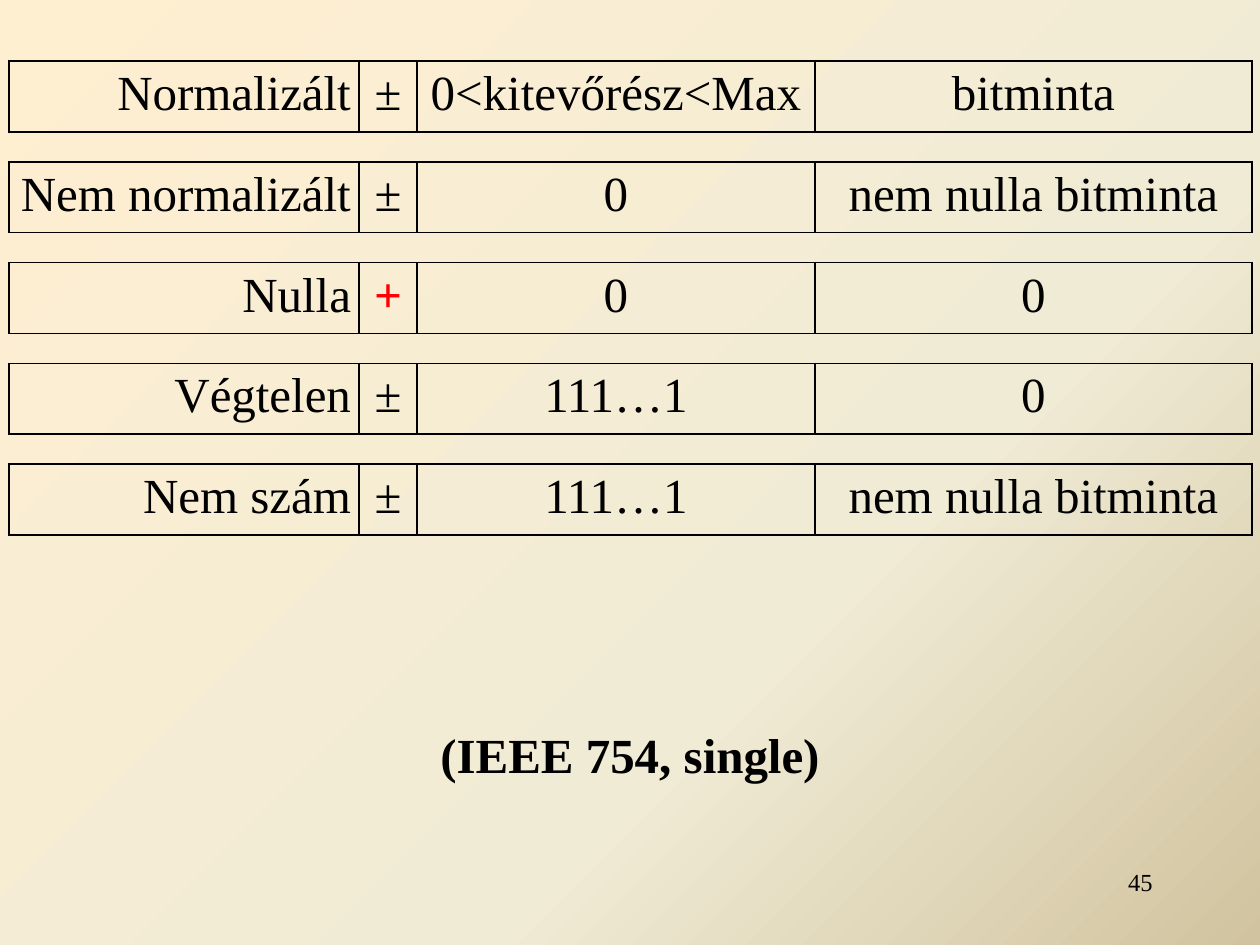
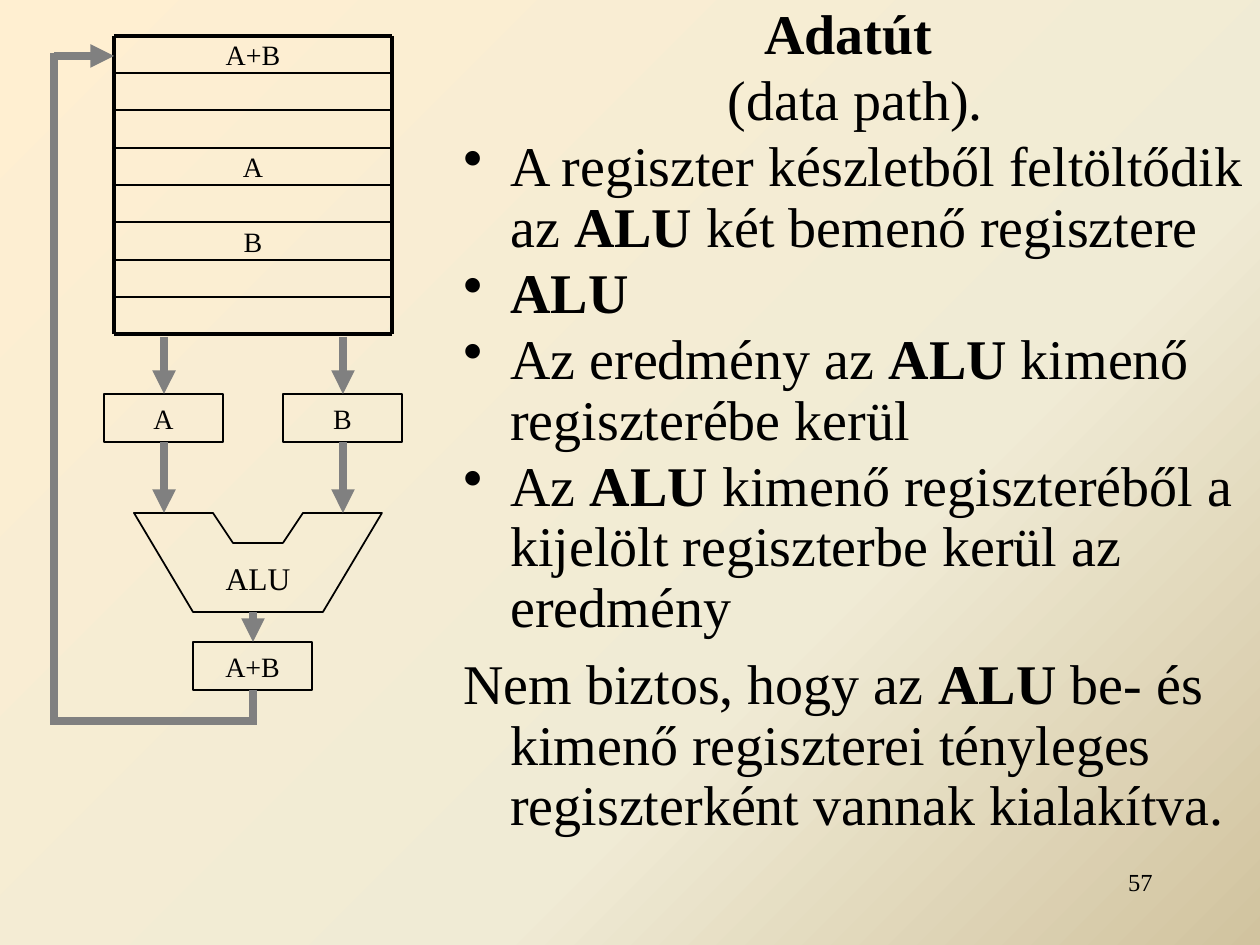
from pptx import Presentation
from pptx.dml.color import RGBColor
from pptx.enum.shapes import MSO_CONNECTOR, MSO_SHAPE
from pptx.enum.text import MSO_ANCHOR, PP_ALIGN
from pptx.oxml import parse_xml
from pptx.oxml.ns import nsdecls, qn
from pptx.oxml.xmlchemy import OxmlElement as new_el
from pptx.util import Emu, Pt

BLACK = RGBColor(0x00, 0x00, 0x00)
RED = RGBColor(0xFF, 0x00, 0x00)
GREY = RGBColor(0x80, 0x80, 0x80)
BACKDROP = [(0, RGBColor(0xFF, 0xEF, 0xD1)),
            (65, RGBColor(0xF0, 0xEB, 0xD5)),
            (100, RGBColor(0xD1, 0xC3, 0x9F))]
FONT = "Times New Roman"
LEFT, CENTER, RIGHT = PP_ALIGN.LEFT, PP_ALIGN.CENTER, PP_ALIGN.RIGHT
TOP, MIDDLE = MSO_ANCHOR.TOP, MSO_ANCHOR.MIDDLE
SLIDE_W, SLIDE_H = 1260, 945
PAGE_BOX = (903, 861, 262, 63)
HANG = 47


def px(n):
    return Emu(round(n * 914400 / 126))


# Shared helpers

def set_backdrop(master):
    fill = master.background.fill
    fill.gradient()
    fill.gradient_angle = 315
    stops = "".join(f'<a:gs pos="{pos * 1000}"><a:srgbClr val="{color}"/></a:gs>'
                    for pos, color in BACKDROP)
    old = next(master._element.iter(qn("a:gsLst")))
    old.getparent().replace(old, parse_xml(f'<a:gsLst {nsdecls("a")}>{stops}</a:gsLst>'))


def add_run(p, text, size, bold=False, color=BLACK):
    r = p.add_run()
    r.text = text
    r.font.color.rgb = color
    for name, value in {"name": FONT, "size": Pt(size), "bold": bold}.items():
        setattr(r.font, name, value)


def set_frame(tf, anchor=TOP, inset=None):
    tf.word_wrap = True
    tf.vertical_anchor = anchor
    if inset is not None:
        for side in ("left", "top", "right", "bottom"):
            setattr(tf, f"margin_{side}", px(inset))


def add_label(shapes, box, text, size, align=CENTER, anchor=TOP, inset=None, bold=False):
    sp = shapes.add_textbox(*map(px, box))
    set_frame(sp.text_frame, anchor, inset)
    p = sp.text_frame.paragraphs[0]
    p.alignment = align
    add_run(p, text, size, bold)
    return p


def outline(sp):
    sp.shadow.inherit = False
    sp.fill.background()
    sp.line.color.rgb = BLACK
    sp.line.width = Pt(1)


def add_line(shapes, start, end, width, color=BLACK, arrow=False):
    line = shapes.add_connector(MSO_CONNECTOR.STRAIGHT, *map(px, (*start, *end)))
    line.line.color.rgb = color
    line.line.width = Pt(width)
    if arrow:
        tail = new_el("a:tailEnd")
        tail.set("type", "triangle")
        line.line._get_or_add_ln().append(tail)
    line._element.spPr.append(new_el("a:effectLst"))


def add_page(prs, number):
    s = prs.slides.add_slide(prs.slide_layouts[6])
    add_label(s.shapes, PAGE_BOX, number, 14, RIGHT)
    return s


# Slide of number formats

FORMATS = [("Normalizált", "±", "0<kitevőrész<Max", "bitminta"),
           ("Nem normalizált", "±", "0", "nem nulla bitminta"),
           ("Nulla", "+", "0", "0"),
           ("Végtelen", "±", "111…1", "0"),
           ("Nem szám", "±", "111…1", "nem nulla bitminta")]
FORMAT_COLS = (350, 58, 398, 437)
FORMAT_ROW, FORMAT_GAP = 69, 30


def set_borders(cell, sides):
    tc_pr = cell._tc.get_or_add_tcPr()
    for side in "LRTB":
        fill = (f'<a:solidFill><a:srgbClr val="{BLACK}"/></a:solidFill>'
                if side in sides else "<a:noFill/>")
        tc_pr.append(parse_xml(
            f'<a:ln{side} {nsdecls("a")} w="{Pt(1)}">{fill}</a:ln{side}>'))
    cell.fill.background()


def fill_format_cell(cell, text, align):
    for name, n in {"left": 8, "right": 8, "top": 6, "bottom": 6}.items():
        setattr(cell, f"margin_{name}", px(n))
    set_borders(cell, "LRTB")
    p = cell.text_frame.paragraphs[0]
    p.alignment = align
    signed = text == "+"
    add_run(p, text, 28, signed, RED if signed else BLACK)


def fill_gap_cell(cell):
    cell.margin_top = cell.margin_bottom = 0
    set_borders(cell, "TB")
    cell.text_frame.paragraphs[0]._p.get_or_add_endParaRPr().set("sz", "600")


def add_format_table(s, x, y):
    rows = 2 * len(FORMATS) - 1
    height = FORMAT_ROW * len(FORMATS) + FORMAT_GAP * (len(FORMATS) - 1)
    table = s.shapes.add_table(rows, len(FORMAT_COLS), px(x), px(y),
                               px(sum(FORMAT_COLS)), px(height)).table
    table.first_row = table.horz_banding = False
    for col, width in zip(table.columns, FORMAT_COLS):
        col.width = px(width)
    for i, row in enumerate(table.rows):
        is_gap = i % 2
        row.height = px(FORMAT_GAP if is_gap else FORMAT_ROW)
        for j, cell in enumerate(row.cells):
            if is_gap:
                fill_gap_cell(cell)
            else:
                fill_format_cell(cell, FORMATS[i // 2][j], CENTER if j else RIGHT)


def build_formats(prs):
    s = add_page(prs, "45")
    p = add_label(s.shapes, (0, 718, SLIDE_W, 97), "(IEEE 754, single)", 28, bold=True)
    p.space_before = Pt(4.2)
    add_format_table(s, 9, 61)


# Slide of the data path: the odd pieces of each text are bold

DATA_PATH_TEXT = [
    (CENTER, False, 3.2, ["", "Adatút "]),
    (CENTER, False, 3.2, ["(data path)."]),
    (LEFT, True, 3.2, ["A regiszter készletből feltöltődik az ", "ALU",
                       " két bemenő regisztere"]),
    (LEFT, True, 3.2, ["", "ALU"]),
    (LEFT, True, 3.2, ["Az eredmény az ", "ALU", " kimenő regiszterébe kerül"]),
    (LEFT, True, 3.2, ["Az ", "ALU", " kimenő regiszteréből a kijelölt "
                       "regiszterbe kerül az eredmény"]),
    (LEFT, False, 9.6, ["Nem biztos, hogy az ", "ALU", " be- és kimenő regiszterei "
                        "tényleges regiszterként vannak kialakítva."])]
REGISTERS = {0: "A+B", 3: "A", 5: "B"}
REGISTER_COUNT = 8


def add_explanation(s, box):
    tf = s.shapes.add_textbox(*map(px, box)).text_frame
    set_frame(tf)
    for i, (align, bullet, before, pieces) in enumerate(DATA_PATH_TEXT):
        p = tf.add_paragraph() if i else tf.paragraphs[0]
        for name, value in {"alignment": align, "line_spacing": 0.9,
                            "space_before": Pt(before)}.items():
            setattr(p, name, value)
        p_pr = p._p.get_or_add_pPr()
        p_pr.set("marL", str(px(HANG)))
        p_pr.set("indent", str(-px(HANG)))
        if bullet:
            mark = new_el("a:buChar")
            mark.set("char", "•")
            p_pr.append(mark)
        for k, piece in enumerate(pieces):
            if piece:
                add_run(p, piece, 32, bold=k % 2 == 1)


def add_register_file(s, x, y, w, h):
    shapes = s.shapes.add_group_shape().shapes
    edges = [y + round(h * i / REGISTER_COUNT) for i in range(REGISTER_COUNT + 1)]
    for i, text in REGISTERS.items():
        add_label(shapes, (x, edges[i], w, edges[i + 1] - edges[i]), text, 16,
                  anchor=MIDDLE, inset=0)
    for edge in edges:
        add_line(shapes, (x, edge), (x + w, edge), 2.25 if edge in (y, y + h) else 1)
    for side in (x, x + w):
        add_line(shapes, (side, y), (side, y + h), 2.25)


def add_register(s, x, y, text):
    sp = s.shapes.add_shape(MSO_SHAPE.RECTANGLE, px(x), px(y), px(119), px(48))
    outline(sp)
    set_frame(sp.text_frame, MIDDLE)
    p = sp.text_frame.paragraphs[0]
    p.alignment = CENTER
    add_run(p, text, 16)


def add_alu(s, x, y):
    points = [(0, 0), (79, 0), (99, 30), (149, 30), (169, 0), (248, 0), (189, 99), (59, 99)]
    corners = [(px(x + dx), px(y + dy)) for dx, dy in points]
    builder = s.shapes.build_freeform(*corners[0], scale=1.0)
    builder.add_line_segments(corners[1:], close=True)
    outline(builder.convert_to_shape())
    add_label(s.shapes, (x + 69, y + 40, 110, 50), "ALU", 18, anchor=MIDDLE)


def add_data_path(s, x, y):
    add_register_file(s, x + 60, y, 278, 298)
    for dx, dy, text in ((50, 358, "A"), (229, 358, "B"), (139, 606, "A+B")):
        add_register(s, x + dx, y + dy, text)
    add_alu(s, x + 80, y + 477)

    # Flow from the registers through the ALU and back
    in_a, in_b, out, back = 110, 289, 199, 0
    flow = [((in_a, 301), (in_a, 358), True), ((in_b, 301), (in_b, 358), True),
            ((in_a, 406), (in_a, 477), True), ((in_b, 406), (in_b, 477), True),
            ((out, 576), (out, 606), True), ((out, 654), (out, 685), False),
            ((out + 4, 685), (back - 4, 685), False), ((back, 685), (back, 17), False),
            ((back, 20), (60, 20), True)]
    for (x1, y1), (x2, y2), arrow in flow:
        add_line(s.shapes, (x + x1, y + y1), (x + x2, y + y2), 4.5, GREY, arrow)


def build_data_path(prs):
    s = add_page(prs, "57")
    add_explanation(s, (451, 0, 809, 869))
    add_data_path(s, 54, 36)


def main():
    prs = Presentation()
    prs.slide_width, prs.slide_height = px(SLIDE_W), px(SLIDE_H)
    set_backdrop(prs.slide_master)
    build_formats(prs)
    build_data_path(prs)
    prs.save("out.pptx")


if __name__ == "__main__":
    main()
